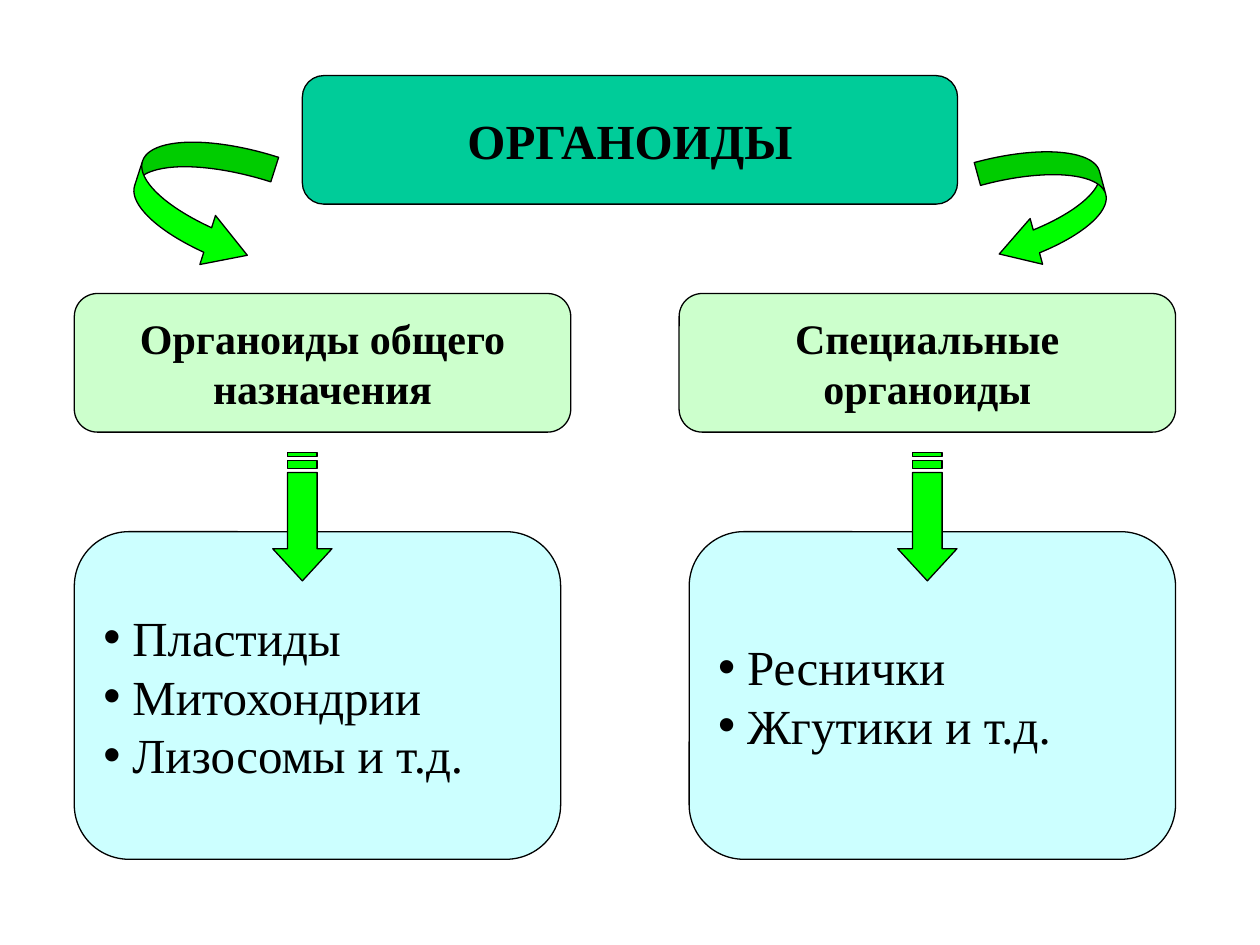
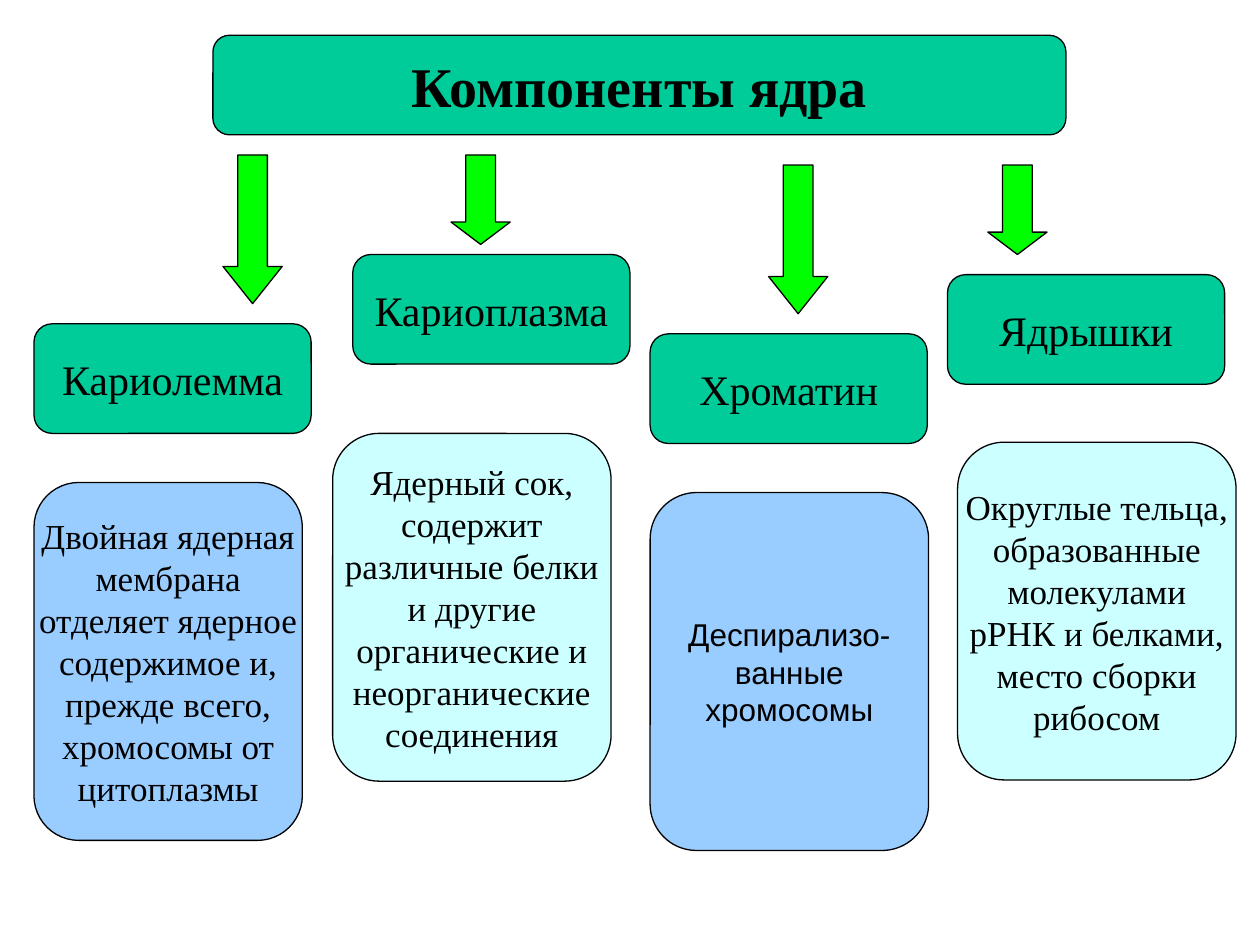
import pptx
import pptx.dml.color
import pptx.enum.shapes
import pptx.enum.text
import pptx.oxml.ns
import pptx.util
from lxml import etree

SHAPES = pptx.enum.shapes.MSO_SHAPE
CENTER = pptx.enum.text.PP_ALIGN.CENTER
LEFT = pptx.enum.text.PP_ALIGN.LEFT

COLORS = {
    "heading": "00CC99",
    "group": "CCFFCC",
    "pale": "CCFFFF",
    "blue": "99CCFF",
    "arrow": "00FF00",
    "ink": "000000",
}
SERIF = "Times New Roman"
SANS = "Arial"
COLUMNS, ROWS = 100, 75
TWO_CONTENT, TITLE_ONLY = 3, 5


class Deck:
    """Holds the style and the current slide; lengths are grid columns and rows."""

    def __init__(self):
        self.presentation = pptx.Presentation()
        self.presentation.slide_width = pptx.util.Inches(10)
        self.presentation.slide_height = pptx.util.Inches(7.5)
        self.slide = None

    def start_slide(self, layout):
        layouts = self.presentation.slide_layouts
        self.slide = self.presentation.slides.add_slide(layouts[layout])

    def x(self, columns):
        return round(columns * self.presentation.slide_width / COLUMNS)

    def y(self, rows):
        return round(rows * self.presentation.slide_height / ROWS)

    def color(self, name):
        return pptx.dml.color.RGBColor.from_string(COLORS[name])

    def paint(self, shape, fill):
        shape.shadow.inherit = False
        shape.fill.solid()
        shape.fill.fore_color.rgb = self.color(fill)
        shape.line.color.rgb = self.color("ink")
        shape.line.width = pptx.util.Pt(0.75)

    def preset(self, kind, box, fill, adjustments=(), rotation=0):
        left, top, width, height = box
        shape = self.slide.shapes.add_shape(
            kind, self.x(left), self.y(top), self.x(width), self.y(height))
        self.paint(shape, fill)
        for index, value in enumerate(adjustments):
            shape.adjustments[index] = value
        shape.rotation = rotation
        return shape

    def set_text(self, shape, lines, size, bold=False, font=SERIF, bulleted=False):
        frame = shape.text_frame
        frame.auto_size = pptx.enum.text.MSO_AUTO_SIZE.NONE
        frame.word_wrap = False
        frame.vertical_anchor = pptx.enum.text.MSO_ANCHOR.MIDDLE
        frame.text = "\n".join(lines)
        for paragraph in frame.paragraphs:
            if bulleted:
                self.add_bullet(paragraph)
            paragraph.alignment = LEFT if bulleted else CENTER
            paragraph.space_before = pptx.util.Pt(0)
            paragraph.font.name = font
            paragraph.font.size = pptx.util.Pt(size)
            paragraph.font.bold = bold
            paragraph.font.color.rgb = self.color("ink")

    def add_bullet(self, paragraph):
        indent = self.x(2.3)
        properties = paragraph._p.get_or_add_pPr()
        properties.set("marL", str(indent))
        properties.set("indent", str(-indent))
        bullet = etree.SubElement(properties, pptx.oxml.ns.qn("a:buChar"))
        bullet.set("char", "•")

    def card(self, box, fill, lines, size, **style):
        shape = self.preset(SHAPES.ROUNDED_RECTANGLE, box, fill)
        self.set_text(shape, lines, size, **style)

    def place(self, placeholder, box):
        """Moves a placeholder to the box and in front of everything drawn so far."""
        left, top, width, height = box
        placeholder.left, placeholder.top = self.x(left), self.y(top)
        placeholder.width, placeholder.height = self.x(width), self.y(height)
        placeholder.element.getparent().append(placeholder.element)

    def title(self, box, text, size):
        self.preset(SHAPES.ROUNDED_RECTANGLE, box, "heading")
        title = self.slide.shapes.title
        self.place(title, box)
        self.set_text(title, [text], size, bold=True)

    def list_card(self, index, box, fill, items, size):
        self.preset(SHAPES.ROUNDED_RECTANGLE, box, fill)
        left, top, width, height = box
        inset = 1.3
        body = self.slide.placeholders[index]
        self.place(body, (left + inset, top, width - 2 * inset, height))
        self.set_text(body, items, size, bulleted=True)

    def down_arrow(self, left, top, height):
        width = 4.7
        head = height / 4 / width
        self.preset(SHAPES.DOWN_ARROW, (left, top, width, height), "arrow", (0.5, head))

    def striped_arrow(self, left, top, width, height):
        """Draws a down arrow on a mesh of 4 by 32 cells, with two stripes above it."""
        def points(cells):
            return [(self.x(left + column * width / 4), self.y(top + row * height / 32))
                    for column, row in cells]

        outline = points([(3, 24), (3, 5), (1, 5), (1, 24), (0, 24), (2, 32), (4, 24)])
        builder = self.slide.shapes.build_freeform(*outline[0])
        builder.add_line_segments(outline[1:], close=True)
        for first, last in ((2, 4), (0, 1)):
            stripe = points([(3, first), (1, first), (1, last), (3, last)])
            builder.move_to(*stripe[0])
            builder.add_line_segments(stripe[1:], close=True)
        self.paint(builder.convert_to_shape(), "arrow")


def build_organelles(deck):
    deck.start_slide(TWO_CONTENT)
    deck.title((24, 6, 52, 10.2), "ОРГАНОИДЫ", 28)
    curve = (0.2, 0.4, 0.33)
    deck.preset(SHAPES.CURVED_RIGHT_ARROW, (10.6, 10.7, 10.2, 10.2), "arrow", curve, 17.7)
    deck.preset(SHAPES.CURVED_LEFT_ARROW, (78.4, 11.5, 9.4, 9.4), "arrow", curve, -15.3)
    groups = [
        (5.9, 5.9, 21.65, ["Органоиды общего", "назначения"],
         ["Пластиды", "Митохондрии", "Лизосомы и т.д."]),
        (53.9, 54.7, 71.25, ["Специальные", "органоиды"],
         ["Реснички", "Жгутики и т.д."]),
    ]
    for index, (name_left, list_left, arrow_left, name, items) in enumerate(groups, 1):
        deck.card((name_left, 23.3, 39.4, 11), "group", name, 24, bold=True)
        deck.list_card(index, (list_left, 42.2, 38.6, 26), "pale", items, 28)
        deck.striped_arrow(arrow_left, 35.9, 4.7, 10.2)


def build_nucleus(deck):
    deck.start_slide(TITLE_ONLY)
    deck.title((16.9, 2.8, 67.7, 7.9), "Компоненты ядра", 32)
    names = [
        ("Кариолемма", 2.7, 25.7),
        ("Кариоплазма", 28, 20.2),
        ("Хроматин", 51.6, 26.5),
        ("Ядрышки", 75.2, 21.8),
    ]
    for name, left, top in names:
        deck.card((left, top, 22, 8.7), "heading", [name], 24)

    serif, sans = {"size": 20}, {"size": 18, "font": SANS}
    descriptions = [
        ((2.7, 38.3, 21.3, 28.4), "blue", serif,
         ["Двойная ядерная", "мембрана", "отделяет ядерное", "содержимое и,",
          "прежде всего,", "хромосомы от", "цитоплазмы"]),
        ((26.4, 34.4, 22.1, 27.6), "pale", serif,
         ["Ядерный сок,", "содержит", "различные белки", "и другие",
          "органические и", "неорганические", "соединения"]),
        ((51.6, 39.1, 22.1, 28.4), "blue", sans,
         ["Деспирализо-", "ванные", "хромосомы"]),
        ((76, 35.1, 22.1, 26.8), "pale", serif,
         ["Округлые тельца,", "образованные", "молекулами", "рРНК и белками,",
          "место сборки", "рибосом"]),
    ]
    for box, fill, style, lines in descriptions:
        deck.card(box, fill, lines, **style)

    long, short = 11.8, 7.1
    for left, top, height in [(17.7, 12.3, long), (35.8, 12.3, short),
                              (61, 13.1, long), (78.4, 13.1, short)]:
        deck.down_arrow(left, top, height)


def main():
    deck = Deck()
    build_organelles(deck)
    build_nucleus(deck)
    deck.presentation.save("out.pptx")


if __name__ == "__main__":
    main()
